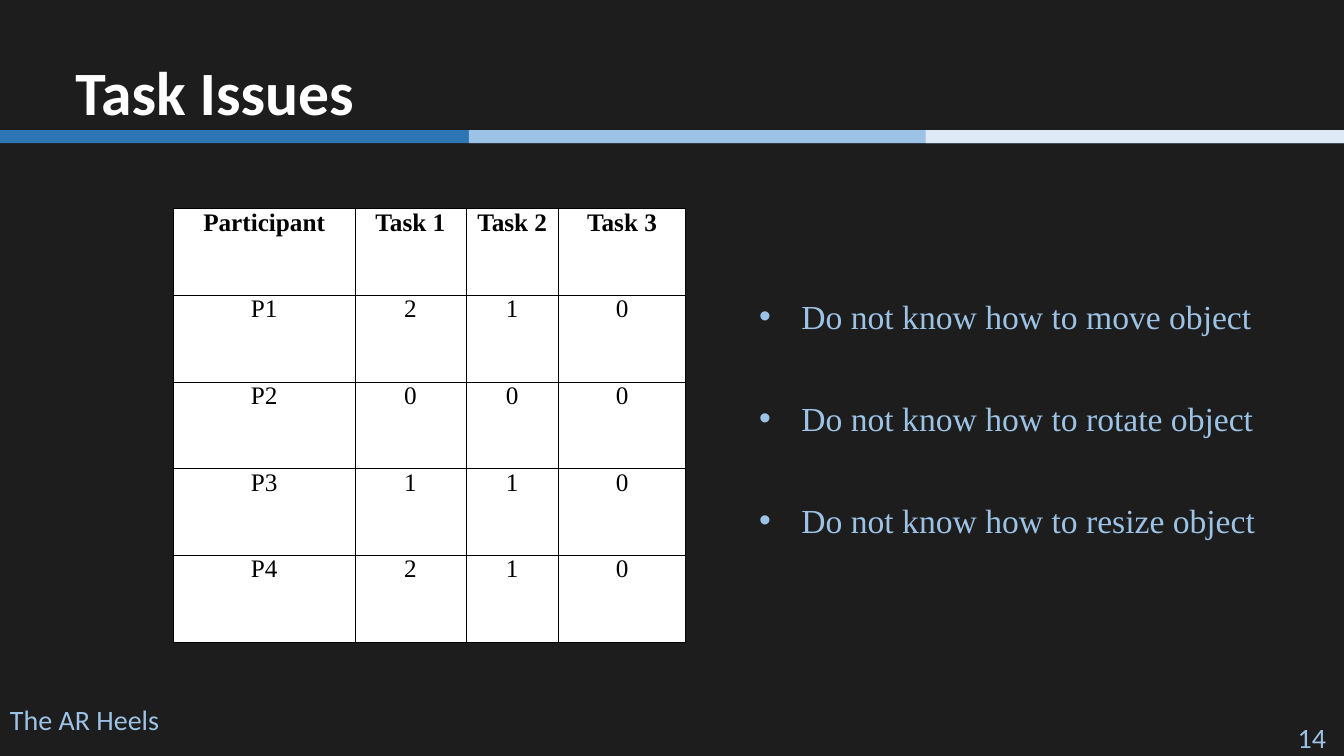
from dataclasses import dataclass

from lxml import etree
from pptx import Presentation
from pptx.dml.color import RGBColor
from pptx.enum import shapes, text
from pptx.oxml import ns
from pptx.util import Inches, Pt


@dataclass(frozen=True)
class Theme:
    background: str = "1D1D1D"
    title: str = "FFFFFF"
    accent: str = "9CC2E5"
    bands: tuple = ("2E75B5", "9CC2E5", "DDEAF6")
    cell: str = "FFFFFF"
    ink: str = "000000"
    sans: str = "Calibri"
    serif: str = "Times New Roman"
    title_size: int = 44
    bullet_size: int = 24
    footer_size: int = 20
    cell_size: int = 18
    border: float = 0.5


THEME = Theme()
SLIDE_WIDTH, SLIDE_HEIGHT = 13.33, 7.5
ISSUE_COUNTS = [
    ("Participant", "Task 1", "Task 2", "Task 3"),
    ("P1", "2", "1", "0"),
    ("P2", "0", "0", "0"),
    ("P3", "1", "1", "0"),
    ("P4", "2", "1", "0"),
]
ISSUES = [f"Do not know how to {action} object" for action in ("move", "rotate", "resize")]


def add_bullet(paragraph, margin, hanging):
    properties = paragraph._p.get_or_add_pPr()
    properties.set("marL", str(Inches(margin)))
    properties.set("indent", str(-Inches(hanging)))
    bullet_color = etree.SubElement(properties, ns.qn("a:buClr"))
    etree.SubElement(bullet_color, ns.qn("a:srgbClr"), val=THEME.accent)
    etree.SubElement(properties, ns.qn("a:buFont"), typeface="Arial")
    etree.SubElement(properties, ns.qn("a:buChar"), char="•")


def write(frame, lines, size, font=THEME.sans, color=THEME.accent, bold=False,
          align=text.PP_ALIGN.LEFT, anchor=text.MSO_ANCHOR.MIDDLE,
          insets=(0.1, 0.05, 0.1, 0.05), spacing=None, gap=0, bulleted=False):
    frame.word_wrap = True
    frame.vertical_anchor = anchor
    frame.margin_left, frame.margin_top, frame.margin_right, frame.margin_bottom = map(Inches, insets)
    for index, line in enumerate(lines):
        paragraph = frame.add_paragraph() if index else frame.paragraphs[0]
        if bulleted:
            add_bullet(paragraph, 0.5, 0.42)
        paragraph.alignment = align
        if spacing:
            paragraph.line_spacing = spacing
        if index and gap:
            paragraph.space_before = Pt(gap)
        run = paragraph.add_run()
        run.text = line
        run.font.size = Pt(size)
        run.font.name = font
        run.font.bold = bold
        run.font.color.rgb = RGBColor.from_string(color)


def add_text(slide, box, lines, **style):
    write(slide.shapes.add_textbox(*map(Inches, box)).text_frame, lines, **style)


def add_header(slide, box):
    left, top, width, height = box
    add_text(slide, (left + 0.65, top + 0.22, 11.16, 1.45), ["Task Issues"],
             size=THEME.title_size, color=THEME.title, bold=True, spacing=0.9)
    band_height = 0.13
    for start, color in zip((0, 4.65, 9.18), THEME.bands):
        band = slide.shapes.add_shape(
            shapes.MSO_SHAPE.RECTANGLE, Inches(left + start), Inches(top + height - band_height),
            Inches(width - start), Inches(band_height))
        band.shadow.inherit = False
        band.fill.solid()
        band.fill.fore_color.rgb = RGBColor.from_string(color)
        band.line.fill.background()


def outline_cell(cell):
    properties = cell._tc.get_or_add_tcPr()
    for position, side in enumerate(("a:lnL", "a:lnR", "a:lnT", "a:lnB")):
        line = etree.Element(ns.qn(side), w=str(Pt(THEME.border)))
        fill = etree.SubElement(line, ns.qn("a:solidFill"))
        etree.SubElement(fill, ns.qn("a:srgbClr"), val=THEME.ink)
        properties.insert(position, line)


def add_issue_table(slide, box):
    rows, columns = len(ISSUE_COUNTS), len(ISSUE_COUNTS[0])
    table = slide.shapes.add_table(rows, columns, *map(Inches, box)).table
    for column, width in zip(table.columns, (1.8, 1.1, 0.92, 1.26)):
        column.width = Inches(width)
    for row_index, values in enumerate(ISSUE_COUNTS):
        table.rows[row_index].height = Inches(box[3] / rows)
        for column_index, value in enumerate(values):
            cell = table.cell(row_index, column_index)
            cell.fill.solid()
            cell.fill.fore_color.rgb = RGBColor.from_string(THEME.cell)
            write(cell.text_frame, [value], size=THEME.cell_size, font=THEME.serif,
                  color=THEME.ink, bold=row_index == 0, align=text.PP_ALIGN.CENTER,
                  anchor=text.MSO_ANCHOR.TOP, insets=(0, 0, 0, 0))
            cell.margin_left = cell.margin_top = cell.margin_right = cell.margin_bottom = 0
            cell.vertical_anchor = text.MSO_ANCHOR.TOP
            outline_cell(cell)


def add_issue_list(slide, box):
    add_text(slide, box, ISSUES, size=THEME.bullet_size, font=THEME.serif,
             insets=(0.1, 0.1, 0.1, 0.32), spacing=0.9, gap=47, bulleted=True)


def add_footer(slide, box):
    left, top, width, height = box
    label_width = 1.91
    add_text(slide, (left, top, label_width, height), ["The AR Heels"], size=THEME.footer_size)
    add_text(slide, (left + width - label_width - 0.08, top, label_width, height), ["14"],
             size=THEME.footer_size, align=text.PP_ALIGN.RIGHT,
             anchor=text.MSO_ANCHOR.BOTTOM, insets=(0.1, 0.05, 0.1, 0.02))


def main():
    deck = Presentation()
    deck.slide_width, deck.slide_height = Inches(SLIDE_WIDTH), Inches(SLIDE_HEIGHT)
    slide = deck.slides.add_slide(deck.slide_layouts[6])
    slide.background.fill.solid()
    slide.background.fill.fore_color.rgb = RGBColor.from_string(THEME.background)
    add_header(slide, (0, 0, SLIDE_WIDTH, 1.42))
    add_issue_table(slide, (1.72, 2.07, 5.08, 4.3))
    add_issue_list(slide, (7.35, 2.64, 5.33, 3.28))
    add_footer(slide, (0, 6.78, SLIDE_WIDTH, 0.72))
    deck.save("out.pptx")


if __name__ == "__main__":
    main()
